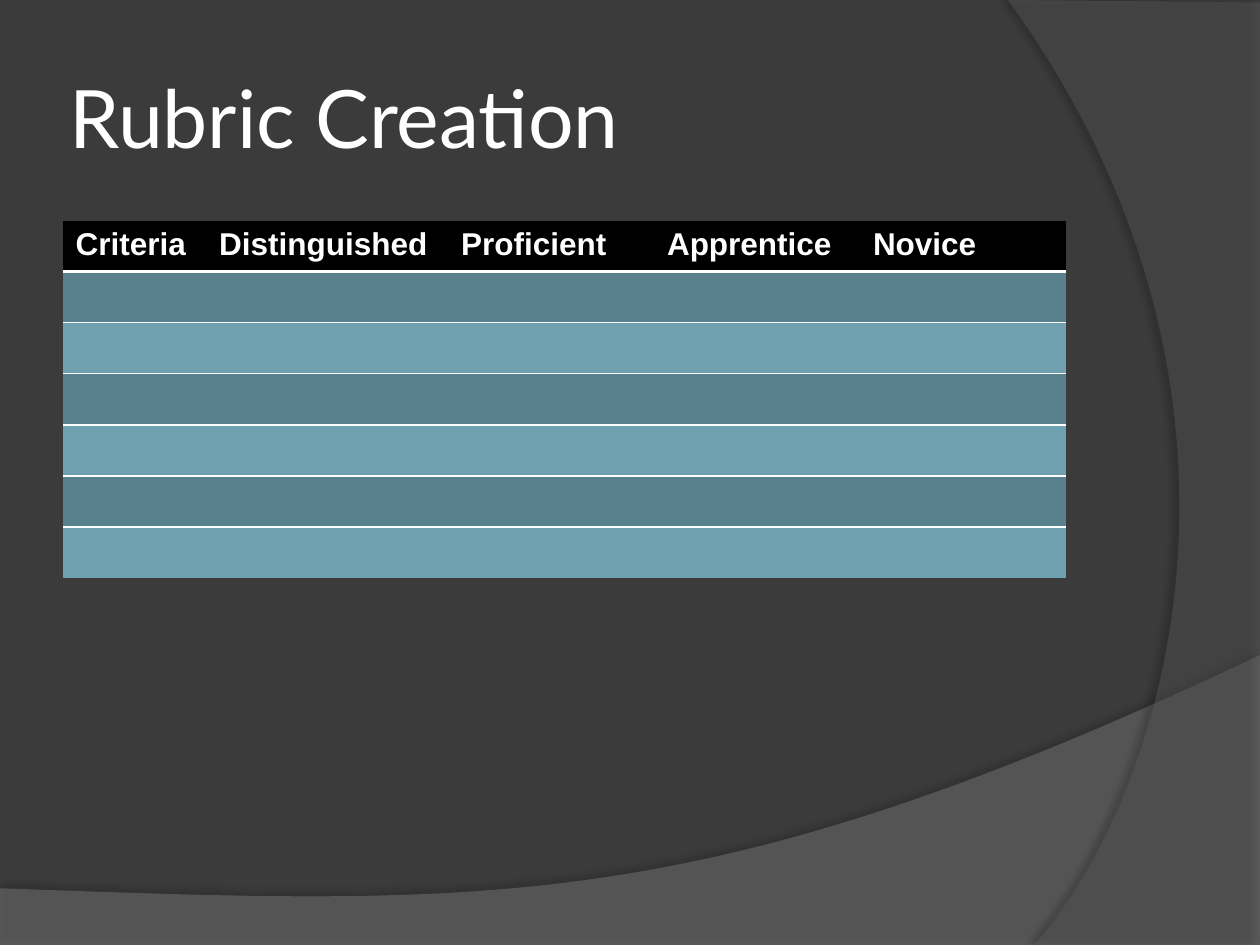
from lxml.etree import SubElement
from pptx import Presentation
from pptx.dml.color import RGBColor
from pptx.enum.text import MSO_ANCHOR, PP_ALIGN
from pptx.oxml.ns import qn
from pptx.util import Inches, Pt

COLOURS = {
    "background": "3B3B3B", "sweep": "7F7F7F", "arc": "5E5E5E", "shadow": "000000",
    "text": "FFFFFF", "header": "000000", "odd": "58808D", "even": "6EA0B0",
}
TITLE_FONT = {"name": "Lato", "size": Pt(46), "bold": False}
HEADER_FONT = {"name": "Arial", "size": Pt(18), "bold": True}
HEADINGS = ["Criteria", "Distinguished", "Proficient", "Apprentice", "Novice"]
COLUMN_SPANS = [2.28, 3.84, 3.27, 3.27, 3.27]
ROW_SPAN = 0.81
BODY_ROWS = 6
CURVE_STEPS = 60

# Outlines in grid units: two numbers are a corner, six are a Bézier curve.
SWEEP = [(0, 14.1), (0, 15), (20, 15), (20, 10.4), (11.18, 14.58, 7.82, 14.38, 0, 14.1)]
ARC = [(20, 0.04), (20, 15), (16.42, 15), (18.7, 12.38, 20.36, 6, 16, 0)]


def curve_points(start, curve):
    """Sample a cubic Bézier curve from start."""
    xs, ys = (start[0], *curve[::2]), (start[1], *curve[1::2])
    for step in range(1, CURVE_STEPS + 1):
        t = step / CURVE_STEPS
        weights = ((1 - t) ** 3, 3 * t * (1 - t) ** 2, 3 * t * t * (1 - t), t ** 3)
        yield tuple(sum(w * v for w, v in zip(weights, values)) for values in (xs, ys))


def add_colour(parent, colour, alpha):
    element = SubElement(parent, qn("a:srgbClr"), val=COLOURS[colour])
    SubElement(element, qn("a:alpha"), val=str(alpha * 1000))


class SlideBuilder:
    """Draws on a grid of 20 columns by 15 rows."""

    def __init__(self, presentation):
        self.column = presentation.slide_width / 20
        self.row = presentation.slide_height / 15
        self.slide = presentation.slides.add_slide(presentation.slide_layouts[5])
        self.fill(self.slide.background.fill, "background")

    def fill(self, fill, colour):
        fill.solid()
        fill.fore_color.rgb = RGBColor.from_string(COLOURS[colour])

    def place(self, column, row, width, height):
        return (round(column * self.column), round(row * self.row),
                round(width * self.column), round(height * self.row))

    def format_font(self, font, values):
        for name, value in values.items():
            setattr(font, name, value)
        font.color.rgb = RGBColor.from_string(COLOURS["text"])

    def backdrop(self, outline, colour, alpha, shadow_alpha, distance, direction):
        points = [outline[0]]
        for part in outline[1:]:
            points.extend([part] if len(part) == 2 else curve_points(points[-1], part))
        scaled = [(x * 1000, y * 1000) for x, y in points]
        builder = self.slide.shapes.build_freeform(
            *scaled[0], scale=(self.column / 1000, self.row / 1000))
        builder.add_line_segments(scaled[1:], close=True)
        shape = builder.convert_to_shape()
        shape.shadow.inherit = False
        shape.line.fill.background()
        self.fill(shape.fill, colour)
        properties = shape.element.spPr
        solid = properties.find(qn("a:solidFill"))
        solid.clear()
        add_colour(solid, colour, alpha)
        shadow = SubElement(
            properties.find(qn("a:effectLst")), qn("a:outerShdw"), blurRad=str(Pt(4)),
            dist=str(Pt(distance)), dir=str(direction * 60000), algn="ctr", rotWithShape="0")
        add_colour(shadow, "shadow", shadow_alpha)

    def title(self, text, *box):
        title = self.slide.shapes.title
        title.left, title.top, title.width, title.height = self.place(*box)
        frame = title.text_frame
        margins = dict.fromkeys(
            ("margin_left", "margin_top", "margin_right", "margin_bottom"), Inches(0.05))
        for name, value in {**margins, "vertical_anchor": MSO_ANCHOR.MIDDLE,
                            "word_wrap": True, "text": text}.items():
            setattr(frame, name, value)
        paragraph = frame.paragraphs[0]
        paragraph.alignment = PP_ALIGN.LEFT
        self.format_font(paragraph.runs[0].font, TITLE_FONT)
        title.element.getparent().append(title.element)  # in front of the backdrop

    def rubric(self, column, row):
        rows = BODY_ROWS + 1
        box = self.place(column, row, sum(COLUMN_SPANS), ROW_SPAN * rows)
        table = self.slide.shapes.add_table(rows, len(HEADINGS), *box).table
        for table_column, span in zip(table.columns, COLUMN_SPANS):
            table_column.width = round(span * self.column)
        for index, table_row in enumerate(table.rows):
            table_row.height = round(ROW_SPAN * self.row)
            for cell, heading in zip(table_row.cells, HEADINGS):
                if index == 0:
                    self.heading(cell, heading)
                else:
                    self.fill(cell.fill, "odd" if index % 2 else "even")
                    self.borders(cell, ["lnL", "lnR", "lnB"])

    def heading(self, cell, text):
        cell.text = text
        self.format_font(cell.text_frame.paragraphs[0].runs[0].font, HEADER_FONT)
        self.borders(cell, ["lnL", "lnR", "lnT"])
        properties = cell._tc.get_or_add_tcPr()
        line = SubElement(properties, qn("a:lnB"), w=str(Pt(2)))
        SubElement(SubElement(line, qn("a:solidFill")), qn("a:srgbClr"), val=COLOURS["text"])
        self.fill(cell.fill, "header")

    def borders(self, cell, sides):
        """Hide the given sides, keeping them ahead of the cell's fill."""
        properties = cell._tc.get_or_add_tcPr()
        for position, side in enumerate(sides):
            line = SubElement(properties, qn(f"a:{side}"), w="0")
            SubElement(line, qn("a:noFill"))
            properties.insert(position, line)


def main():
    presentation = Presentation()
    presentation.slide_width, presentation.slide_height = Inches(10), Inches(7.5)
    builder = SlideBuilder(presentation)
    builder.backdrop(SWEEP, "sweep", 45, 35, 3.5, 270)
    builder.backdrop(ARC, "arc", 40, 45, 4, 180)
    builder.title("Rubric Creation", 1, 0.6, 16.34, 2.5)
    builder.rubric(1, 3.5)
    presentation.save("out.pptx")


if __name__ == "__main__":
    main()
